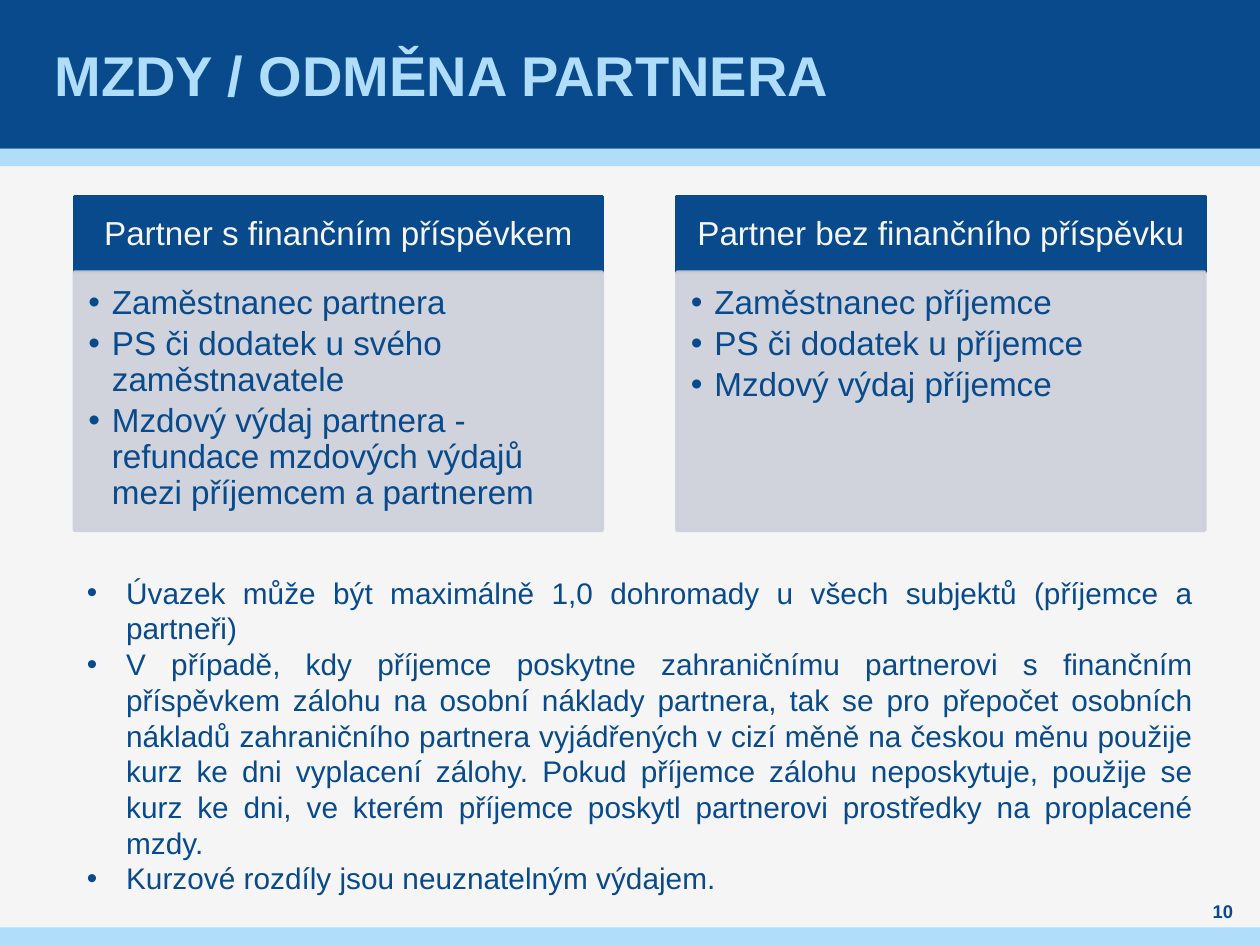
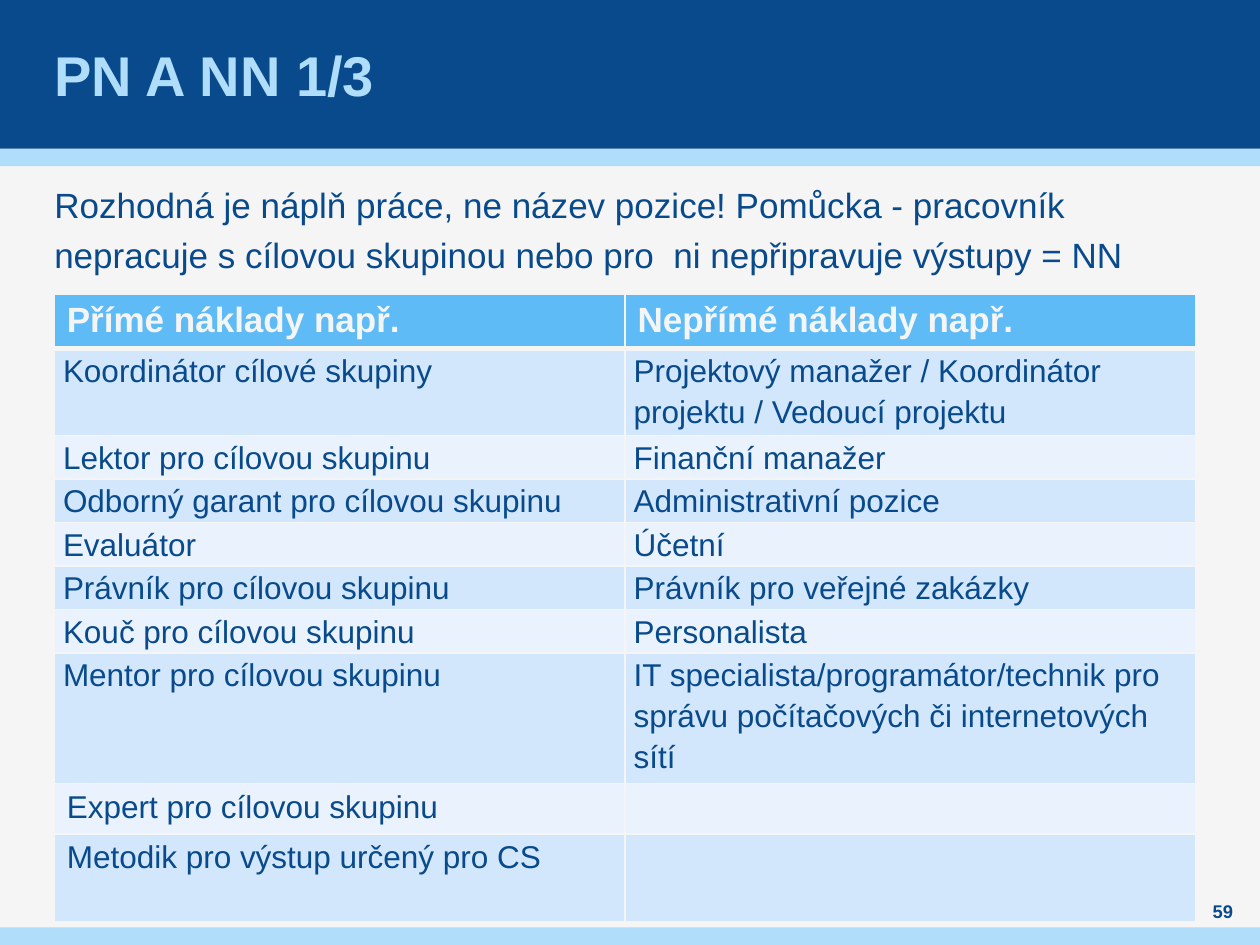
"""Two slides on partner wages and on direct and indirect costs."""
from lxml.etree import SubElement
from pptx import Presentation
from pptx.dml.color import RGBColor as RGB
from pptx.enum.shapes import MSO_SHAPE as Kind
from pptx.enum.text import MSO_ANCHOR as Anchor, PP_ALIGN as Align
from pptx.oxml.ns import qn
from pptx.util import Pt

HUE = {"navy": "084A8B", "sky": "AFDDFA", "pale": "F5F5F5", "grey": "CCD0DA",
       "head": "5FBBF5", "odd": "D2E7FB", "even": "EAF3FD"}
SIDES = ("margin_left", "margin_top", "margin_right", "margin_bottom")


def put(item, **opts):
    """Set attributes; pad gives the four margins in points."""
    for side, size in zip(SIDES, opts.pop("pad", ())):
        setattr(item, side, Pt(size))
    for key, val in opts.items():
        setattr(item, key, val)


def write(frame, lines, size, hue, bold=False, hang=0, **para):
    """Fill a text frame; hang is the bullet indent in points."""
    frame.word_wrap = True
    for num, line in enumerate(lines):
        part = frame.add_paragraph() if num else frame.paragraphs[0]
        put(part, **{"alignment": Align.LEFT, **para})
        run = part.add_run()
        run.text = line
        put(run.font, name="Arial", size=Pt(size), bold=bold)
        run.font.color.rgb = RGB.from_string(HUE[hue])
        if hang:
            props = part._p.get_or_add_pPr()
            props.set("marL", str(Pt(hang)))
            props.set("indent", str(-Pt(hang)))
            SubElement(props, qn("a:buFont"), typeface="Arial")
            SubElement(props, qn("a:buChar"), char="•")


deck = Presentation()
put(deck, slide_width=Pt(720), slide_height=Pt(540))

BANDS = [(85, 10, "sky"), (0, 85, "navy"), (530, 10, "sky")]
pages = []
for title, number in [("MZDY / ODMĚNA PARTNERA", "10"), ("PN A NN 1/3", "59")]:
    page = deck.slides.add_slide(deck.slide_layouts[6])
    pages.append(page)
    page.background.fill.solid()
    page.background.fill.fore_color.rgb = RGB.from_string(HUE["pale"])
    for top, high, hue in BANDS:
        band = page.shapes.add_shape(Kind.RECTANGLE, 0, Pt(top), Pt(720), Pt(high))
        band.shadow.inherit = False
        band.fill.solid()
        band.fill.fore_color.rgb = RGB.from_string(HUE[hue])
        band.line.fill.background()
    frame = page.shapes.add_textbox(Pt(28.1), 0, Pt(663), Pt(85)).text_frame
    put(frame, pad=(3, 0, 3, 0), vertical_anchor=Anchor.MIDDLE)
    write(frame, [title], 32, "sky", True)
    frame = page.shapes.add_textbox(Pt(680.4), Pt(513.4), Pt(36.7), Pt(14.4)).text_frame
    put(frame, pad=(0, 0, 0, 0), vertical_anchor=Anchor.MIDDLE)
    write(frame, [number], 10.5, "navy", True, alignment=Align.CENTER)

wages, costs = pages

CARDS = [
    ("Partner s finančním příspěvkem",
     ["Zaměstnanec partnera", "PS či dodatek u svého zaměstnavatele",
      "Mzdový výdaj partnera - refundace mzdových výdajů mezi příjemcem a partnerem"]),
    ("Partner bez finančního příspěvku",
     ["Zaměstnanec příjemce", "PS či dodatek u příjemce", "Mzdový výdaj příjemce"]),
]
for col, (head, items) in enumerate(CARDS):
    boxes = []
    for top, high, hue in [(112.3, 43.2, "navy"), (155.5, 147.6, "grey")]:
        box = wages.shapes.add_shape(Kind.RECTANGLE, Pt(42.5 + 344.3 * col), Pt(top),
                                     Pt(301.7), Pt(high))
        box.shadow.inherit = False
        box.fill.solid()
        box.line.width = Pt(2)
        for paint in (box.fill.fore_color, box.line.color):
            paint.rgb = RGB.from_string(HUE[hue])
        boxes.append(box)
    for tint in boxes[1]._element.spPr.iter(qn("a:srgbClr")):
        SubElement(tint, qn("a:alpha"), val="90000")
    frame = boxes[0].text_frame
    put(frame, pad=(10.8, 6, 10.8, 6), vertical_anchor=Anchor.MIDDLE)
    write(frame, [head], 19, "pale", alignment=Align.CENTER, line_spacing=0.9)
    frame = boxes[1].text_frame
    put(frame, pad=(8, 8, 10.8, 12), vertical_anchor=Anchor.TOP)
    write(frame, items, 19, "navy", hang=13.5, line_spacing=0.9, space_after=Pt(2.85))

NOTES = [
    "Úvazek může být maximálně 1,0 dohromady u všech subjektů (příjemce a partneři)",
    "V případě, kdy příjemce poskytne zahraničnímu partnerovi s finančním příspěvkem "
    "zálohu na osobní náklady partnera, tak se pro přepočet osobních nákladů "
    "zahraničního partnera vyjádřených v cizí měně na českou měnu použije kurz ke dni "
    "vyplacení zálohy. Pokud příjemce zálohu neposkytuje, použije se kurz ke dni, ve "
    "kterém příjemce poskytl partnerovi prostředky na proplacené mzdy.",
    "Kurzové rozdíly jsou neuznatelným výdajem.",
]
frame = wages.shapes.add_textbox(Pt(42.5), Pt(324.7), Pt(646.5), Pt(193)).text_frame
write(frame, NOTES, 17, "navy", hang=22.5, alignment=Align.JUSTIFY)

frame = costs.shapes.add_textbox(Pt(31), Pt(100), Pt(646.5), Pt(62.6)).text_frame
put(frame, pad=(0, 0, 0, 0))
write(frame, ["Rozhodná je náplň práce, ne název pozice! Pomůcka - pracovník nepracuje "
              "s cílovou skupinou nebo pro  ni nepřipravuje výstupy = NN"],
      20, "navy", line_spacing=Pt(28.8), space_before=Pt(6), space_after=Pt(6))

ROWS = [
    (31, "Přímé náklady např.", "Nepřímé náklady např."),
    (47.5, "Koordinátor cílové skupiny",
     "Projektový manažer / Koordinátor projektu / Vedoucí projektu"),
    (22.3, "Lektor pro cílovou skupinu", "Finanční manažer"),
    (22.3, "Odborný garant pro cílovou skupinu", "Administrativní pozice"),
    (22.3, "Evaluátor", "Účetní"),
    (22.3, "Právník pro cílovou skupinu", "Právník pro veřejné zakázky"),
    (22.3, "Kouč pro cílovou skupinu", "Personalista"),
    (72, "Mentor pro cílovou skupinu",
     "IT specialista/programátor/technik pro správu počítačových či internetových sítí"),
    (26.6, "Expert pro cílovou skupinu", ""),
    (50, "Metodik pro výstup určený pro CS", ""),
]
high = sum(row[0] for row in ROWS)
grid = costs.shapes.add_table(len(ROWS), 2, Pt(31), Pt(168), Pt(652.3), Pt(high)).table
put(grid, first_row=False, horz_banding=False)
for num, (high, *texts) in enumerate(ROWS):
    grid.rows[num].height = Pt(high)
    hue = "head" if num == 0 else "odd" if num % 2 else "even"
    tight = 0 < num < 8
    for col, text in enumerate(texts):
        cell = grid.cell(num, col)
        put(cell, pad=(5, 0, 5, 0) if tight else (7.2, 3.6, 7.2, 3.6))
        if text:
            write(cell.text_frame, [text], 18 if num else 20, "navy" if num else "pale",
                  num == 0, line_spacing=1.15 if tight else 1.0)
        props = cell._tc.get_or_add_tcPr()
        for side in "LRTB":
            thick = (num, side) in [(0, "B"), (1, "T")]
            edge = SubElement(props, qn(f"a:ln{side}"), w=str(Pt(3 if thick else 1)))
            SubElement(SubElement(edge, qn("a:solidFill")), qn("a:srgbClr"), val=HUE["pale"])
        cell.fill.solid()
        cell.fill.fore_color.rgb = RGB.from_string(HUE[hue])

deck.save("out.pptx")
